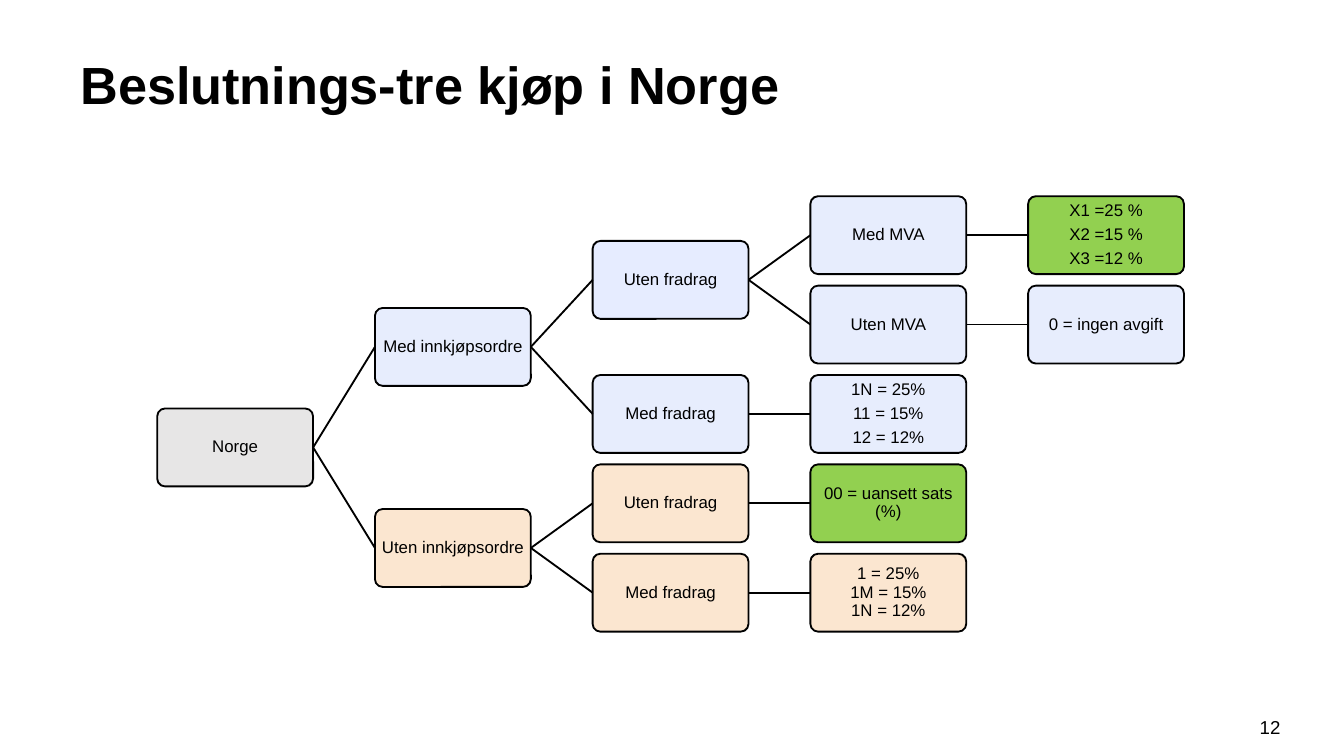
from copy import deepcopy
from dataclasses import dataclass

from lxml.etree import SubElement
from pptx import Presentation
from pptx.dml.color import RGBColor
from pptx.enum.shapes import MSO_CONNECTOR, MSO_SHAPE
from pptx.enum.text import MSO_ANCHOR, PP_ALIGN
from pptx.oxml.ns import qn
from pptx.util import Inches, Pt


@dataclass(frozen=True)
class Theme:
    font: str = "Arial"
    ink: str = "000000"
    root: str = "E7E6E6"
    order: str = "E7EDFD"
    order_strong: str = "E6ECFF"
    no_order: str = "FBE6D0"
    highlight: str = "92D050"
    title_size: float = 28
    node_size: float = 9
    number_size: float = 10
    line_width: float = 1


@dataclass(frozen=True)
class Grid:
    left: float = 1.17
    first_center: float = 1.75
    column_pitch: float = 1.62
    row_pitch: float = 2.66 / 4
    node_width: float = 1.16
    node_height: float = 0.58


@dataclass(frozen=True)
class Node:
    fill: str
    paragraphs: tuple
    children: tuple = ()


THEME = Theme()
GRID = Grid()
RIGHT_SIDE, LEFT_SIDE = 3, 1


def write_text(shape, *paragraphs, size, bold=False, align=PP_ALIGN.LEFT,
               anchor=MSO_ANCHOR.TOP, insets=(0.1, 0.05),
               line_spacing=1.0, space_after=0):
    """Fill a shape with paragraphs; a newline inside one is a line break."""
    frame = shape.text_frame
    frame.word_wrap = True
    frame.vertical_anchor = anchor
    frame.margin_left = frame.margin_right = Inches(insets[0])
    frame.margin_top = frame.margin_bottom = Inches(insets[1])
    for index, text in enumerate(paragraphs):
        paragraph = frame.add_paragraph() if index else frame.paragraphs[0]
        paragraph.text = text
        paragraph.alignment = align
        paragraph.line_spacing = line_spacing
        paragraph.space_after = Pt(space_after)
        for run in paragraph.runs:
            run.font.name = THEME.font
            run.font.size = Pt(size)
            run.font.bold = bold
            run.font.color.rgb = RGBColor.from_string(THEME.ink)
        # Line breaks need the run format too, or they keep the default height.
        for line_break in paragraph._p.findall(qn("a:br")):
            line_break.append(deepcopy(paragraph.runs[0]._r.rPr))


class TreeSlide:
    def __init__(self, presentation):
        self.width = presentation.slide_width
        self.height = presentation.slide_height
        self.slide = presentation.slides.add_slide(presentation.slide_layouts[6])

    def text_box(self, left, top, width, height, text, **style):
        """Place a text box by shares of the slide's size."""
        box = self.slide.shapes.add_textbox(
            int(self.width * left), int(self.height * top),
            int(self.width * width), int(self.height * height))
        write_text(box, text, **style)

    def node_box(self, node, column, row):
        box = self.slide.shapes.add_shape(
            MSO_SHAPE.ROUNDED_RECTANGLE,
            Inches(GRID.left + column * GRID.column_pitch),
            Inches(GRID.first_center + row * GRID.row_pitch - GRID.node_height / 2),
            Inches(GRID.node_width), Inches(GRID.node_height))
        box.adjustments[0] = 0.1
        box.shadow.inherit = False
        box.fill.solid()
        box.fill.fore_color.rgb = RGBColor.from_string(node.fill)
        self.outline(box)
        write_text(box, *node.paragraphs, size=THEME.node_size,
                   align=PP_ALIGN.CENTER, anchor=MSO_ANCHOR.MIDDLE,
                   insets=(0.03, 0.03), line_spacing=0.9, space_after=3.15)
        return box

    def branch(self, parent, child):
        line = self.slide.shapes.add_connector(MSO_CONNECTOR.STRAIGHT, 0, 0, 0, 0)
        line.begin_connect(parent, RIGHT_SIDE)
        line.end_connect(child, LEFT_SIDE)
        self.outline(line)
        SubElement(line._element.spPr, qn("a:effectLst"))

    def outline(self, shape):
        shape.line.color.rgb = RGBColor.from_string(THEME.ink)
        shape.line.width = Pt(THEME.line_width)

    def tree(self, node, column=0, first_row=0):
        """Draw a subtree; return its box, its row and the next free row.

        Each leaf takes one row, and a parent sits midway between its
        first and last child.
        """
        boxes, rows, next_row = [], [], first_row
        for child in node.children:
            box, row, next_row = self.tree(child, column + 1, next_row)
            boxes.append(box)
            rows.append(row)
        if not rows:
            rows, next_row = [first_row], first_row + 1
        row = (rows[0] + rows[-1]) / 2
        parent = self.node_box(node, column, row)
        for box in boxes:
            self.branch(parent, box)
        return parent, row, next_row


WITH_ORDER = Node(THEME.order, ("Med innkjøpsordre",), (
    Node(THEME.order_strong, ("Uten fradrag",), (
        Node(THEME.order, ("Med MVA",), (
            Node(THEME.highlight, ("X1 =25 %", "X2 =15 %", "X3 =12 %")),)),
        Node(THEME.order, ("Uten MVA",), (
            Node(THEME.order, ("0 = ingen avgift",)),)),
    )),
    Node(THEME.order, ("Med fradrag",), (
        Node(THEME.order, ("1N = 25%", "11 = 15%", "12 = 12%")),)),
))
WITHOUT_ORDER = Node(THEME.no_order, ("Uten innkjøpsordre",), (
    Node(THEME.no_order, ("Uten fradrag",), (
        Node(THEME.highlight, ("00 = uansett sats (%)",)),)),
    Node(THEME.no_order, ("Med fradrag",), (
        Node(THEME.no_order, ("1 = 25%\n1M = 15%\n1N = 12%",)),)),
))
NORWAY = Node(THEME.root, ("Norge",), (WITH_ORDER, WITHOUT_ORDER))


def main():
    presentation = Presentation()
    presentation.slide_width = Inches(10)
    presentation.slide_height = presentation.slide_width * 9 // 16
    page = TreeSlide(presentation)
    page.text_box(0.05, 0.06, 0.83, 0.1, "Beslutnings-tre kjøp i Norge",
                  size=THEME.title_size, bold=True)
    page.tree(NORWAY)
    page.text_box(0.92, 0.94, 0.05, 0.05, "12", size=THEME.number_size,
                  align=PP_ALIGN.CENTER, insets=(0.05, 0.04))
    presentation.save("out.pptx")


if __name__ == "__main__":
    main()
